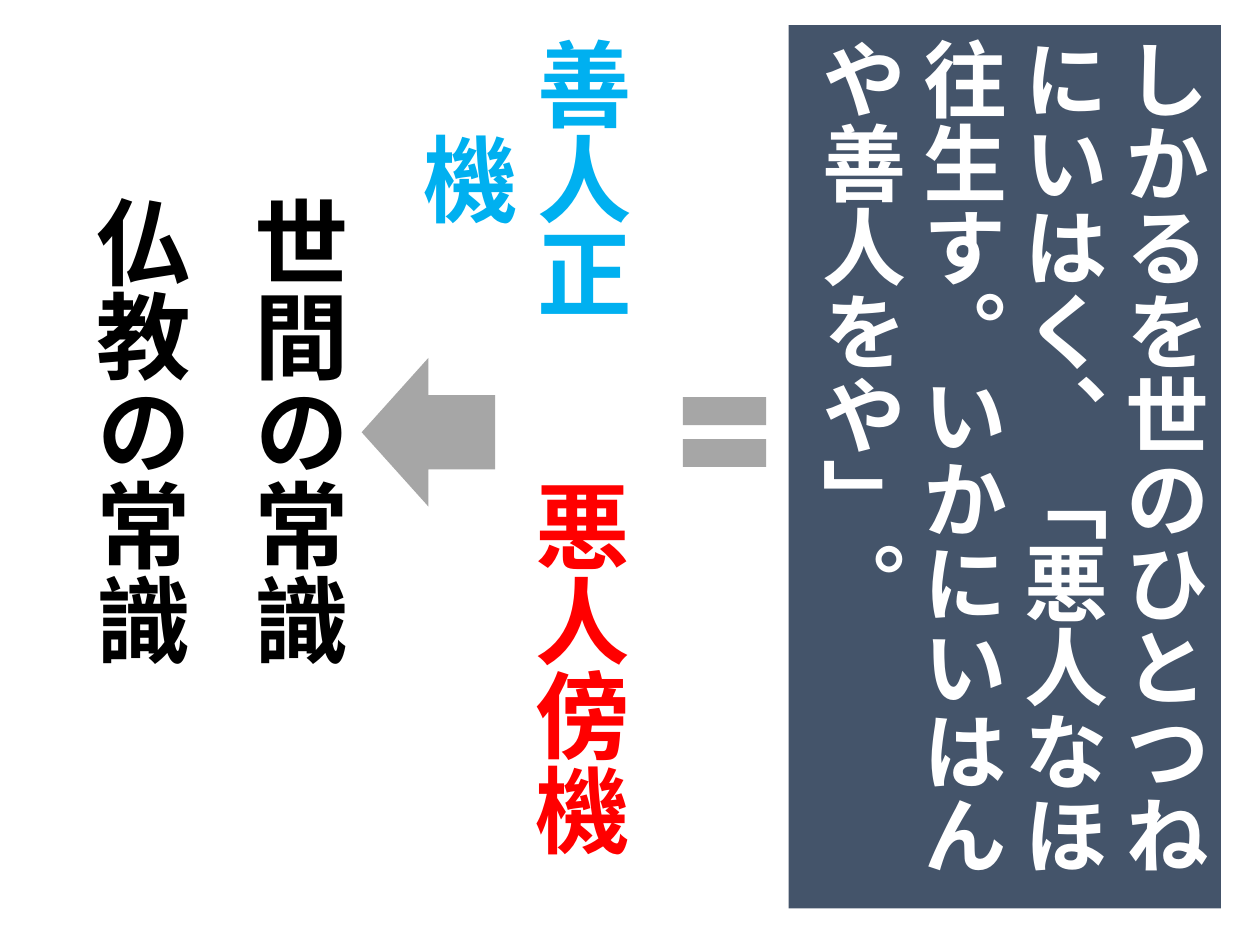
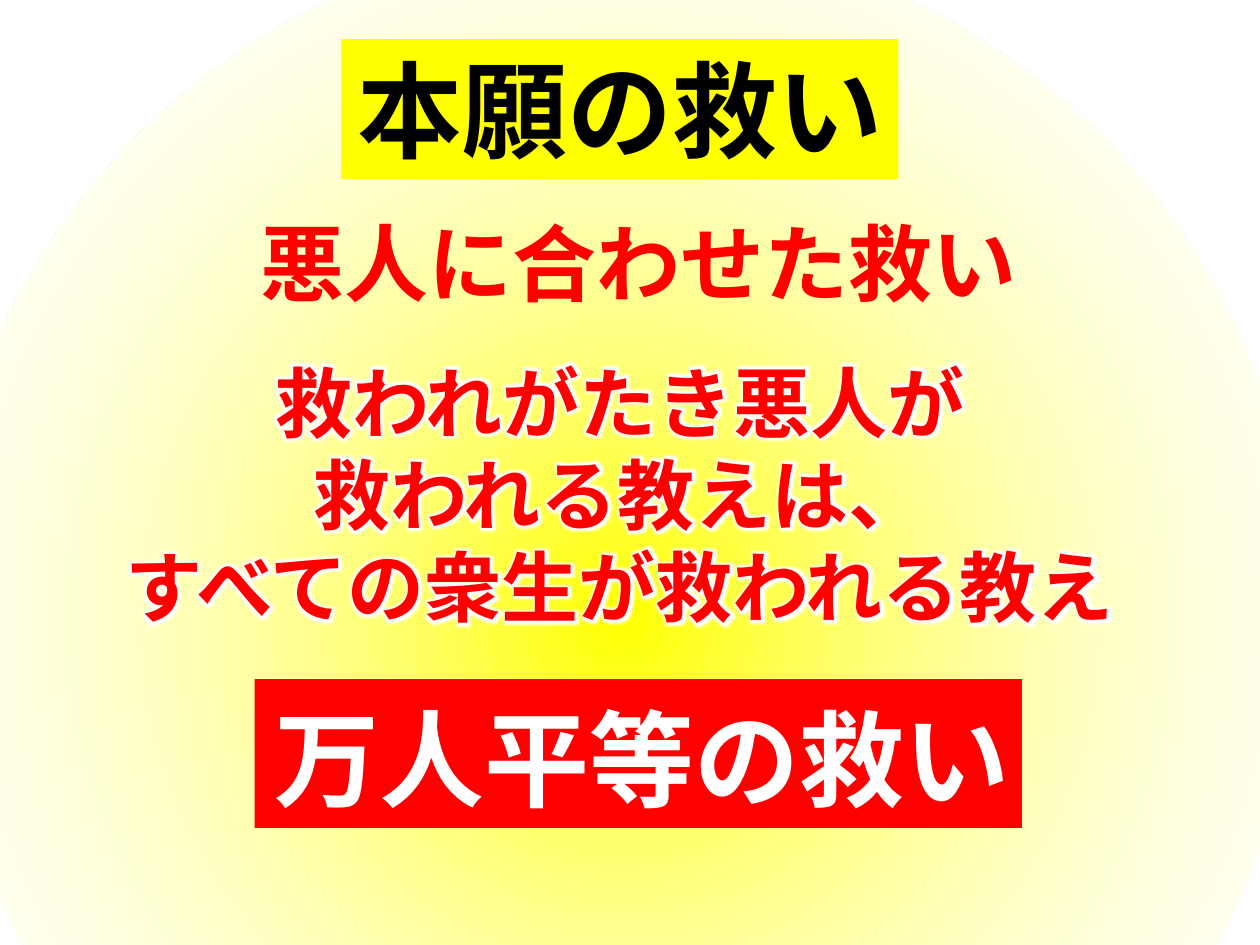
"""Builds two slides on the salvation of good and evil persons."""
from dataclasses import dataclass

from lxml import etree
from pptx import Presentation, util as u
from pptx.dml.color import RGBColor
from pptx.enum import shapes, text
from pptx.oxml.ns import qn

COLUMNS, ROWS = 10, 7.5
GRID = u.Inches(1)
KIND = shapes.MSO_SHAPE


@dataclass(frozen=True)
class Theme:
    latin: str = "Calibri"
    japanese: str = "Noto Sans CJK JP"
    black: str = "000000"
    white: str = "FFFFFF"
    red: str = "FF0000"
    blue: str = "00B0F0"
    yellow: str = "FFFF00"
    slate: str = "44546A"
    grey: str = "A6A6A6"
    verse: int = 48
    term: int = 54
    heading: int = 60
    teaching: int = 44
    glow: int = 6


THEME = Theme()
TERM_WIDTH = 1.11
COMMON_SENSE = dict(top=1.45, height=3.97, left=0.5, step=1.26)

VERSE = dict(
    lines=["しかるを世のひとつねにいはく、「悪人なほ往生す。いかにいはんや善人をや」。"],
    at=(6.26, 0.2, 3.43, 7.01), size=THEME.verse, color=THEME.white,
    fill=THEME.slate, font=THEME.japanese, vertical=True)
PERSONS = [
    ("悪人傍機", THEME.red, (3.99, 3.71, TERM_WIDTH, 3.28)),
    ("善人正機", THEME.blue, (4, 0.2, TERM_WIDTH, 3.17)),
]
VIEWS = ["仏教の常識", "世間の常識"]
SIGNS = [
    (KIND.MATH_EQUAL, (5.3, 2.96, 0.9, 0.94), 0),
    (KIND.RIGHT_ARROW, (2.87, 2.84, 1.06, 1.18), 180),
]

HALO = (-0.48, -0.5, 10.8, 10.8)
SALVATION = [
    dict(lines=["本願の救い"], at=(2.71, 0.31, 4.42, 1.11), size=THEME.heading,
         color=THEME.black, fill=THEME.yellow, centered=True, wrap=False),
    dict(lines=["悪人に合わせた救い"], at=(0.76, 1.63, 8.61, 0.91),
         size=THEME.verse, color=THEME.red, centered=True),
    dict(lines=["救われがたき悪人が", "救われる教えは、", "すべての衆生が救われる教え"],
         at=(0.81, 2.77, 8.22, 2.32), size=THEME.teaching, color=THEME.red,
         centered=True, wrap=False, glow=True),
    dict(lines=["万人平等の救い"], at=(2.02, 5.39, 6.09, 1.18),
         size=THEME.heading, color=THEME.white, fill=THEME.red,
         font=THEME.japanese, wrap=False, insets=(0.16, 0.12, 0.05, 0.05)),
]


def place(cells):
    return [round(cell * GRID) for cell in cells]


def add_figure(slide, kind, at, fill=None):
    figure = slide.shapes.add_shape(kind, *place(at))
    figure.shadow.inherit = False
    figure.line.fill.background()
    if fill:
        figure.fill.solid()
        figure.fill.fore_color.rgb = RGBColor.from_string(fill)
    else:
        figure.fill.background()
    return figure


def add_glow(run):
    effects = etree.SubElement(run.font._element, qn("a:effectLst"))
    glow = etree.SubElement(effects, qn("a:glow"), rad=str(u.Pt(THEME.glow)))
    etree.SubElement(glow, qn("a:srgbClr"), val=THEME.white)


def add_words(slide, lines, at, size, color, fill=None, font=THEME.latin,
              vertical=False, centered=False, wrap=True, glow=False,
              insets=(0.1, 0.05, 0.1, 0.05)):
    if fill:
        box = add_figure(slide, KIND.RECTANGLE, at, fill)
    else:
        box = slide.shapes.add_textbox(*place(at))
    frame = box.text_frame
    frame.word_wrap = wrap
    frame.auto_size = text.MSO_AUTO_SIZE.SHAPE_TO_FIT_TEXT
    frame.vertical_anchor = text.MSO_ANCHOR.TOP
    (frame.margin_left, frame.margin_top,
     frame.margin_right, frame.margin_bottom) = place(insets)
    if vertical:
        frame._txBody.bodyPr.set("vert", "eaVert")
    frame.text = "\n".join(lines)
    for paragraph in frame.paragraphs:
        paragraph.alignment = (text.PP_ALIGN.CENTER if centered
                               else text.PP_ALIGN.LEFT)
        paragraph.font.size = u.Pt(size)
        paragraph.font.bold = True
        paragraph.font.color.rgb = RGBColor.from_string(color)
        paragraph.font.name = font
        etree.SubElement(paragraph.font._element, qn("a:ea"),
                         typeface=THEME.japanese)
        if glow:
            for run in paragraph.runs:
                add_glow(run)


def add_halo(slide):
    halo = add_figure(slide, KIND.OVAL, HALO)
    empty = halo._element.spPr.find(qn("a:noFill"))
    gradient = etree.Element(qn("a:gradFill"), rotWithShape="1")
    stops = etree.SubElement(gradient, qn("a:gsLst"))
    for position, color, opacity in [(0, THEME.yellow, 100), (95, THEME.white, 0)]:
        stop = etree.SubElement(stops, qn("a:gs"), pos=str(position * 1000))
        shade = etree.SubElement(stop, qn("a:srgbClr"), val=color)
        if opacity < 100:
            etree.SubElement(shade, qn("a:alpha"), val=str(opacity * 1000))
    circle = etree.SubElement(gradient, qn("a:path"), path="circle")
    etree.SubElement(circle, qn("a:fillToRect"),
                     {side: "50000" for side in "ltrb"})
    empty.getparent().replace(empty, gradient)


def build_common_sense(slide):
    add_words(slide, **VERSE)
    for person, color, at in PERSONS:
        add_words(slide, [person], at, THEME.term, color,
                  vertical=True, centered=True)
    for column, view in enumerate(VIEWS):
        left = COMMON_SENSE["left"] + column * COMMON_SENSE["step"]
        at = (left, COMMON_SENSE["top"], TERM_WIDTH, COMMON_SENSE["height"])
        add_words(slide, [view], at, THEME.term, THEME.black, vertical=True)
    for kind, at, rotation in SIGNS:
        add_figure(slide, kind, at, THEME.grey).rotation = rotation


def build_salvation(slide):
    add_halo(slide)
    for words in SALVATION:
        add_words(slide, **words)


def main():
    deck = Presentation()
    deck.slide_width, deck.slide_height = place((COLUMNS, ROWS))
    for build in (build_common_sense, build_salvation):
        build(deck.slides.add_slide(deck.slide_layouts[6]))
    deck.save("out.pptx")


if __name__ == "__main__":
    main()
